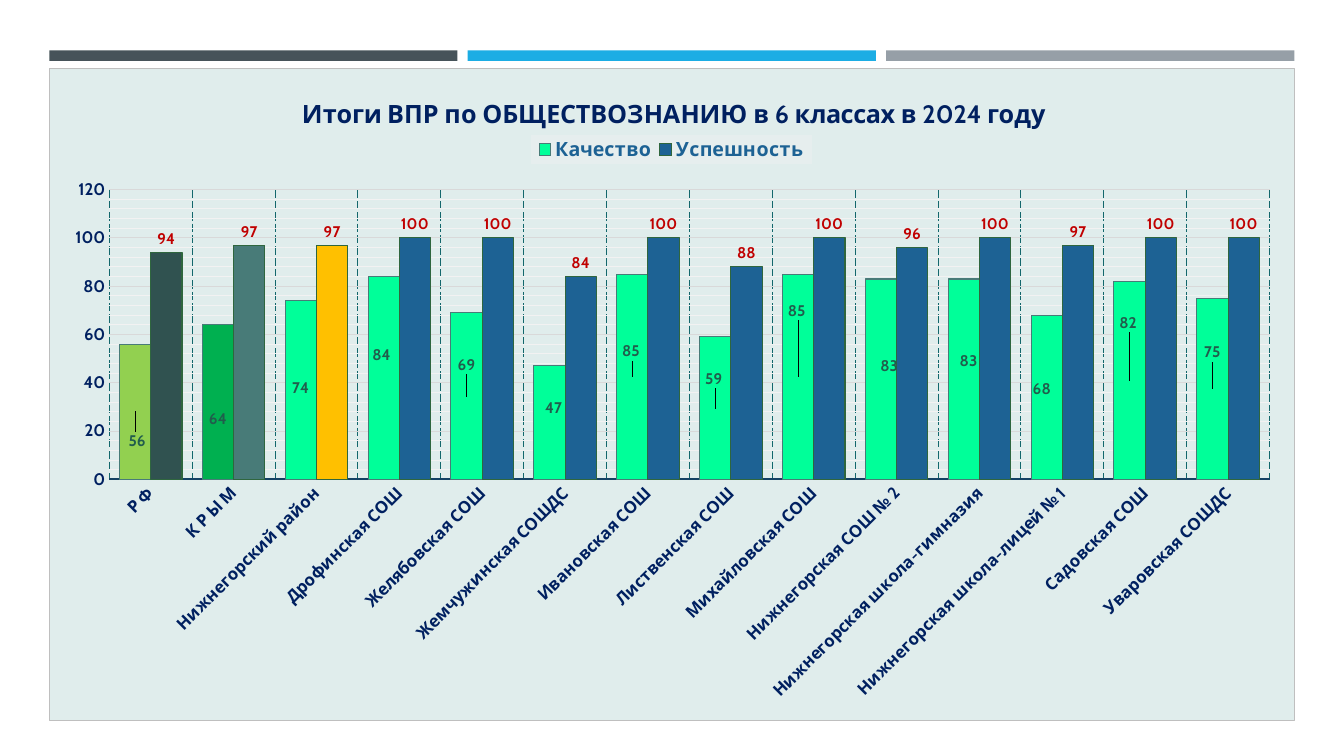
from lxml import etree
from pptx import Presentation
from pptx.chart.data import CategoryChartData
from pptx.dml.color import RGBColor
from pptx.enum import chart as kinds, dml, shapes
from pptx.oxml import parse_xml
from pptx.oxml.ns import nsdecls, qn
from pptx.util import Pt

FONT = "Cabin"
NAVY = RGBColor(0x00, 0x20, 0x60)
BLUE = RGBColor(0x1D, 0x62, 0x94)
RED = RGBColor(0xC0, 0x00, 0x00)
GREEN = RGBColor(0x21, 0x5D, 0x4C)
MINT = RGBColor(0x00, 0xFF, 0x99)
TEAL = RGBColor(0x13, 0x67, 0x6C)
DEEP = RGBColor(0x13, 0x41, 0x63)
GRAY = RGBColor(0xD9, 0xD9, 0xD9)
SAGE = RGBColor(0x48, 0x7B, 0x78)
MOSS = RGBColor(0x2F, 0x66, 0x3E)
LIME = RGBColor(0x92, 0xD0, 0x50)
LEAF = RGBColor(0x00, 0xB0, 0x50)
PINE = RGBColor(0x30, 0x52, 0x50)
GOLD = RGBColor(0xFF, 0xC0, 0x00)
BLACK = RGBColor(0x00, 0x00, 0x00)
BANDS = [RGBColor(0x46, 0x53, 0x59), RGBColor(0x1C, 0xAD, 0xE4),
         RGBColor(0x96, 0x9F, 0xA7)]

TITLE = "Итоги ВПР по ОБЩЕСТВОЗНАНИЮ в 6 классах в 2024 году"
# school, quality, success, shift of the quality label from the bar's centre
ROWS = [
    ("Р Ф", 56, 94, (1.5, 21)),
    ("К Р Ы М", 64, 97, (0, 12)),
    ("Нижнегорский район", 74, 97, (0, -1)),
    ("Дрофинская СОШ", 84, 100, (-1.5, -16)),
    ("Желябовская СОШ", 69, 100, (0, -22)),
    ("Жемчужинская СОШДС", 47, 84, (3, -10)),
    ("Ивановская СОШ", 85, 100, (-1, -18)),
    ("Лиственская СОШ", 59, 88, (-1, -21)),
    ("Михайловская СОШ", 85, 100, (-1, -47)),
    ("Нижнегорская СОШ № 2", 83, 96, (6, -9)),
    ("Нижнегорская школа-гимназия", 83, 100, (3.5, -13)),
    ("Нижнегорская школа-лицей № 1", 68, 97, (-3.5, -6)),
    ("Садовская СОШ", 82, 100, (-1, -41)),
    ("Уваровская СОШДС", 75, 100, (0, -26)),
]
WIDE, HIGH = 890, 466.5


def style(font, size=12, color=NAVY, bold=True):
    font.name, font.size, font.bold = FONT, Pt(size), bold
    font.color.rgb = color


def stroke(line, color, width=0.75, dash=None):
    line.color.rgb = color
    line.width = Pt(width)
    if dash:
        line.dash_style = dash


def paint(shape, color):
    shape.fill.solid()
    shape.fill.fore_color.rgb = color


def place(prior, x, y, w=None, h=None, inner=False, edge=True):
    """Put a manual layout, in points of the chart, after the element prior."""
    tags = [("layoutTarget", "inner")] if inner else []
    if edge:
        tags += [("xMode", "edge"), ("yMode", "edge")]
    tags += [("x", round(x / WIDE, 4)), ("y", round(y / HIGH, 4))]
    if w:
        tags += [("w", round(w / WIDE, 4)), ("h", round(h / HIGH, 4))]
    for old in prior.getparent().findall(qn("c:layout")):
        old.getparent().remove(old)
    layout = parse_xml(f"<c:layout {nsdecls('c')}/>")
    manual = etree.SubElement(layout, qn("c:manualLayout"))
    for tag, val in tags:
        etree.SubElement(manual, qn("c:" + tag)).set("val", str(val))
    prior.addnext(layout)


def panel(fill, edge=None):
    """Return the c:spPr of a filled area with a thin line or none."""
    line = f'<a:solidFill><a:srgbClr val="{edge}"/></a:solidFill>' if edge else "<a:noFill/>"
    return parse_xml(
        f'<c:spPr {nsdecls("c", "a")}><a:solidFill><a:srgbClr val="{fill}"/>'
        f'</a:solidFill><a:ln w="9525">{line}</a:ln></c:spPr>')


def band(slide, left, color):
    bar = slide.shapes.add_shape(shapes.MSO_SHAPE.RECTANGLE,
                                 Pt(left), Pt(36), Pt(291.6), Pt(7.5))
    bar.shadow.inherit = False
    paint(bar, color)
    bar.line.fill.background()


def axes(chart):
    cat, val = chart.category_axis, chart.value_axis
    for axis in (cat, val):
        axis.major_tick_mark = axis.minor_tick_mark = kinds.XL_TICK_MARK.NONE
        axis.has_major_gridlines = True
        style(axis.tick_labels.font)
    stroke(cat.format.line, DEEP, 1.5)
    stroke(cat.major_gridlines.format.line, TEAL, dash=dml.MSO_LINE.LONG_DASH)
    cat._element.find(qn("c:txPr")).find(qn("a:bodyPr")).set("rot", "-2700000")
    val.format.line.fill.background()
    stroke(val.major_gridlines.format.line, GRAY)
    val.minimum_scale, val.maximum_scale = 0, 120
    val.major_unit, val.minor_unit = 20, 4
    val.has_minor_gridlines = True
    minor = val._element.find(qn("c:minorGridlines"))
    minor.append(parse_xml(
        f'<c:spPr {nsdecls("c", "a")}><a:ln w="9525"><a:solidFill>'
        '<a:srgbClr val="F2F2F2"/></a:solidFill></a:ln></c:spPr>'))
    val.tick_labels.number_format = "0"
    val.tick_labels.number_format_is_linked = False


def bars(series, color, edge, ink, spot, points):
    paint(series.format, color)
    stroke(series.format.line, edge)
    for i, tint in enumerate(points):
        point = series.points[i].format
        paint(point, tint)
        stroke(point.line, edge)
    labels = series.data_labels
    labels.show_value = True
    labels.number_format, labels.number_format_is_linked = "0", False
    labels.position = spot
    style(labels.font, 11, ink)


def shift(series, spot):
    for i, row in enumerate(ROWS):
        label = series.points[i].data_label
        style(label.font, 11, GREEN)
        label.position = spot
        mark = series.data_labels._element.findall(qn("c:dLbl"))[i]
        place(mark.find(qn("c:idx")), *row[3], edge=False)


def graph(slide):
    data = CategoryChartData(number_format="0")
    data.categories = [row[0] for row in ROWS]
    data.add_series("Качество", [row[1] for row in ROWS])
    data.add_series("Успешность", [row[2] for row in ROWS])
    chart = slide.shapes.add_chart(kinds.XL_CHART_TYPE.COLUMN_CLUSTERED, Pt(35.2),
                                   Pt(48.5), Pt(WIDE), Pt(HIGH), data).chart
    style(chart.font, 10, BLACK, False)
    root = chart._chartSpace.find(qn("c:chart"))
    root.addnext(panel("E0EDEC", "BFBFBF"))
    place_plot(chart, root)

    chart.has_title = True
    head = chart.chart_title
    head.include_in_layout = False
    run = head.text_frame.paragraphs[0].add_run()
    run.text = TITLE
    style(run.font, 18)
    place(head._element.find(qn("c:tx")), 177, 17)

    chart.has_legend = True
    key = chart.legend
    key.position = kinds.XL_LEGEND_POSITION.TOP
    key.include_in_layout = False
    style(key.font, 14, BLUE)
    key._element.find(qn("c:txPr")).addprevious(panel("E6EEEE"))
    place(key._element.find(qn("c:legendPos")), 344, 47.5, 201, 21)
    axes(chart)


def place_plot(chart, root):
    plot = chart.plots[0]
    plot.gap_width, plot.overlap, plot.vary_by_categories = 65, 0, False
    place(plot._element, 42.5, 86.8, 829.5, 207.3, inner=True)
    area = root.find(qn("c:plotArea"))
    area.insert(0, area.find(qn("c:layout")))
    good, done = plot.series
    spots = kinds.XL_LABEL_POSITION
    bars(good, MINT, SAGE, GREEN, spots.CENTER, [LIME, LEAF])
    bars(done, BLUE, MOSS, RED, spots.OUTSIDE_END, [PINE, SAGE, GOLD])
    shift(good, spots.CENTER)


def main():
    deck = Presentation()
    deck.slide_width, deck.slide_height = Pt(960), Pt(540)
    slide = deck.slides.add_slide(deck.slide_layouts[6])
    for i, color in enumerate(BANDS):
        band(slide, 35.2 + 298.9 * i, color)
    graph(slide)
    deck.save("out.pptx")


if __name__ == "__main__":
    main()
